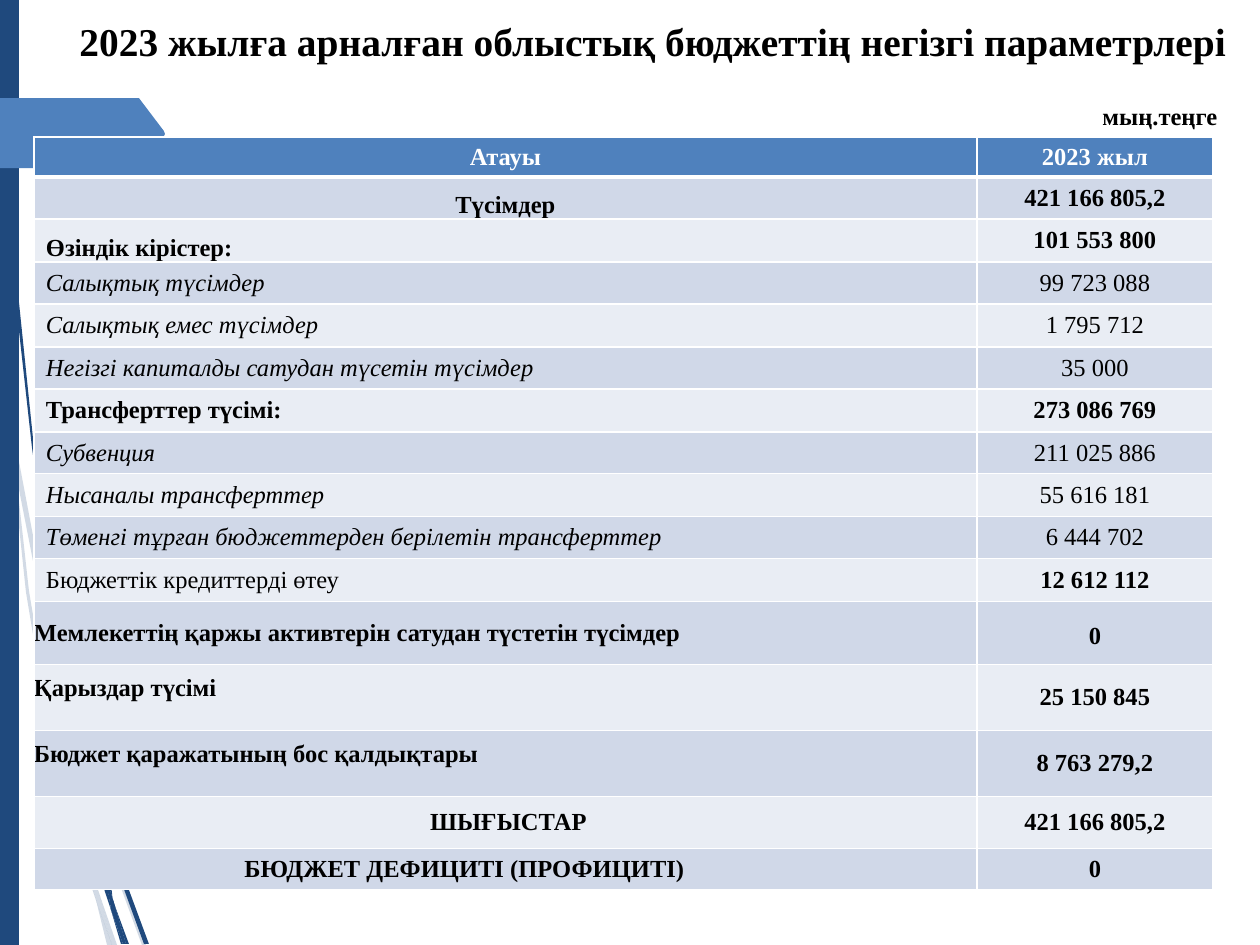
"""Builds a slide with the main parameters of the 2023 regional budget."""
from dataclasses import dataclass

from lxml.etree import SubElement
from pptx import Presentation
from pptx.dml.color import RGBColor
from pptx.enum.shapes import MSO_SHAPE
from pptx.enum.text import MSO_ANCHOR, PP_ALIGN
from pptx.oxml import parse_xml
from pptx.oxml.ns import nsdecls, qn
from pptx.util import Emu, Pt

SCALE = 914400 / 126
FONT = "Times New Roman"
COLORS = {
    "navy": "1F497D", "blue": "4F81BD", "white": "FFFFFF",
    "black": "000000", "band": "D0D8E8", "pale": "E9EDF4",
}
COLUMNS = (943, 236)

PALE_RIBBONS = [
    [(54, 658), (79, 755), (81, 738), (59, 655), (35, 546), (14, 435), (16, 474), (34, 566)],
    [(87, 765), (83, 751), (83, 769), (116, 874), (142, 945), (146, 945), (120, 872)],
    [(112, 945), (117, 945), (100, 896)],
    [(88, 861), (66, 780), (45, 686), (29, 591), (16, 474), (10, 441), (26, 592),
     (42, 688), (62, 782), (87, 873), (96, 900), (93, 891)],
    [(79, 755), (82, 814), (88, 861), (91, 872), (100, 896), (98, 890), (86, 814), (83, 769)],
    [(96, 900), (107, 945), (112, 945)],
    [(91, 872), (88, 861), (93, 891), (96, 900), (112, 945), (100, 896)],
]
NAVY_RIBBONS = [
    [(6, 139), (15, 294), (32, 447), (53, 601), (54, 606), (52, 571), (34, 447),
     (18, 292), (8, 137), (4, 60), (4, 0), (3, 0), (3, 60)],
    [(107, 818), (103, 808), (104, 827), (125, 892), (144, 944), (149, 944), (129, 890)],
    [(105, 871), (92, 828), (68, 701), (60, 636), (54, 601), (64, 702), (88, 830),
     (105, 892), (111, 910), (110, 903)],
    [(126, 944), (129, 944), (115, 906)],
    [(111, 910), (121, 944), (123, 944)],
    [(101, 813), (105, 872), (110, 890), (115, 906), (113, 902), (105, 827)],
    [(110, 890), (104, 871), (110, 903), (111, 910), (123, 944), (126, 944), (115, 906)],
]
TAB = [(0, 98), (139, 98), (164, 131), (165, 134), (164, 136), (140, 168), (0, 168)]


@dataclass
class Row:
    """One budget line: texts, height and the way its label is set."""
    label: str
    value: str
    height: int
    bold: bool = True
    italic: bool = False
    value_bold: bool = True
    centered: bool = False
    anchor: MSO_ANCHOR = MSO_ANCHOR.MIDDLE
    margins: tuple = (0, 0, 0, 0)
    value_margins: tuple = (0, 0, 0, 0)


def detail(label, value, height):
    """Return an indented italic line."""
    return Row(label, value, height, bold=False, italic=True, value_bold=False, margins=(12, 0, 0, 0))


ROWS = [
    Row("Атауы", "2023 жыл", 40, centered=True),
    Row("Түсімдер", "421 166 805,2", 42, centered=True, anchor=MSO_ANCHOR.BOTTOM),
    Row("Өзіндік кірістер:", "101 553 800", 43, anchor=MSO_ANCHOR.BOTTOM, margins=(12, 0, 0, 0)),
    detail("Салықтық түсімдер", "99 723 088", 42),
    detail("Салықтық емес түсімдер", "1 795 712", 43),
    detail("Негізгі капиталды сатудан түсетін түсімдер", "35 000", 42),
    Row("Трансферттер түсімі:", "273 086 769", 43, margins=(12, 0, 0, 0)),
    detail("Субвенция", "211 025 886", 42),
    detail("Нысаналы трансферттер", "55 616 181", 43),
    detail("Төменгі тұрған бюджеттерден берілетін трансферттер", "6 444 702", 42),
    Row("Бюджеттік кредиттерді өтеу", "12 612 112", 43, bold=False, margins=(12, 0, 0, 0)),
    Row("Мемлекеттің қаржы активтерін сатудан түстетін түсімдер", "0", 63,
        value_margins=(12, 11, 12, 5)),
    Row("Қарыздар түсімі", "25 150 845", 66, margins=(0, 0, 0, 19)),
    Row("Бюджет қаражатының бос қалдықтары", "8 763 279,2", 66, margins=(0, 0, 0, 19)),
    Row("ШЫҒЫСТАР", "421 166 805,2", 52, centered=True, margins=(6, 0, 0, 0)),
    Row("БЮДЖЕТ ДЕФИЦИТІ (ПРОФИЦИТІ)", "0", 41, centered=True, margins=(0, 0, 82, 0)),
]


def px(length):
    """Turn pixels into EMU."""
    return Emu(round(length * SCALE))


def rgb(name):
    """Look up a named colour."""
    return RGBColor.from_string(COLORS[name])


def paint(shape, color, opacity=100):
    """Give a shape a plain fill without line or shadow."""
    shape.shadow.inherit = False
    shape.line.fill.background()
    shape.fill.solid()
    shape.fill.fore_color.rgb = rgb(color)
    if opacity < 100:
        tone = shape.fill._xPr.find(qn("a:solidFill"))[0]
        SubElement(tone, qn("a:alpha"), val=str(opacity * 1000))


def add_outline(page, points, color, opacity=100):
    """Draw a closed outline through the points."""
    builder = page.shapes.build_freeform(*points[0], scale=SCALE)
    builder.add_line_segments(points[1:], close=True)
    paint(builder.convert_to_shape(), color, opacity)


def add_span(para, text, size, color="black", bold=True, italic=False):
    """Add one formatted run."""
    span = para.add_run()
    span.text = text
    font = span.font
    font.size, font.name, font.bold, font.italic = Pt(size), FONT, bold, italic
    font.color.rgb = rgb(color)
    return span


def add_text(page, frame, text, size, anchor, align):
    """Add a text box with one line."""
    box = page.shapes.add_textbox(*map(px, frame))
    box.text_frame.word_wrap = True
    box.text_frame.vertical_anchor = anchor
    para = box.text_frame.paragraphs[0]
    para.alignment = align
    return para, add_span(para, text, size)


def add_title(page):
    """Add the heading with its soft text shadow."""
    para, span = add_text(page, (11, 11, 1239, 108),
                          "2023 жылға арналған облыстық бюджеттің негізгі параметрлері",
                          22.5, MSO_ANCHOR.TOP, PP_ALIGN.CENTER)
    properties = para._p.get_or_add_pPr()
    properties.set("marL", "0")
    properties.set("indent", str(px(46)))
    shadow = parse_xml(
        f'<a:effectLst {nsdecls("a")}><a:outerShdw blurRad="38100" dist="38100" dir="2700000" algn="tl">'
        '<a:srgbClr val="000000"><a:alpha val="43000"/></a:srgbClr></a:outerShdw></a:effectLst>')
    span._r.rPr.find(qn("a:solidFill")).addnext(shadow)


def set_borders(cell, bottom):
    """Give a cell white borders."""
    properties = cell._tc.get_or_add_tcPr()
    for side, width in (("L", 1), ("R", 1), ("T", 1), ("B", bottom)):
        line = SubElement(properties, qn(f"a:ln{side}"), w=str(Pt(width)))
        fill = SubElement(line, qn("a:solidFill"))
        SubElement(fill, qn("a:srgbClr"), val=COLORS["white"])


def fill_cell(cell, text, index, bold, italic, centered, anchor, margins):
    """Format a cell and write its text."""
    set_borders(cell, 1 if index else 3)
    cell.fill.solid()
    cell.fill.fore_color.rgb = rgb(("band" if index % 2 else "pale") if index else "blue")
    cell.vertical_anchor = anchor
    cell.margin_left, cell.margin_top, cell.margin_right, cell.margin_bottom = map(px, margins)
    para = cell.text_frame.paragraphs[0]
    para.alignment = PP_ALIGN.CENTER if centered else PP_ALIGN.LEFT
    add_span(para, text, 14, "black" if index else "white", bold, italic)


def add_budget(page):
    """Add the budget table."""
    height = sum(row.height for row in ROWS)
    frame = map(px, (34, 137, sum(COLUMNS), height))
    table = page.shapes.add_table(len(ROWS), len(COLUMNS), *frame).table
    for column, width in zip(table.columns, COLUMNS):
        column.width = px(width)
    for index, row in enumerate(ROWS):
        table.rows[index].height = px(row.height)
        fill_cell(table.cell(index, 0), row.label, index, row.bold, row.italic,
                  row.centered, row.anchor, row.margins)
        fill_cell(table.cell(index, 1), row.value, index, row.value_bold, False,
                  True, MSO_ANCHOR.MIDDLE, row.value_margins)


def main():
    """Build and save the deck."""
    deck = Presentation()
    deck.slide_width, deck.slide_height = px(1260), px(945)
    page = deck.slides.add_slide(deck.slide_layouts[6])
    for points in PALE_RIBBONS:
        add_outline(page, points, "navy", 20)
    for points in NAVY_RIBBONS:
        add_outline(page, points, "navy")
    paint(page.shapes.add_shape(MSO_SHAPE.RECTANGLE, *map(px, (0, 0, 19, 945))), "navy")
    add_outline(page, TAB, "blue")
    add_title(page)
    add_budget(page)
    add_text(page, (1090, 66, 170, 71), "мың.теңге", 14, MSO_ANCHOR.BOTTOM, PP_ALIGN.LEFT)
    deck.save("out.pptx")


if __name__ == "__main__":
    main()
